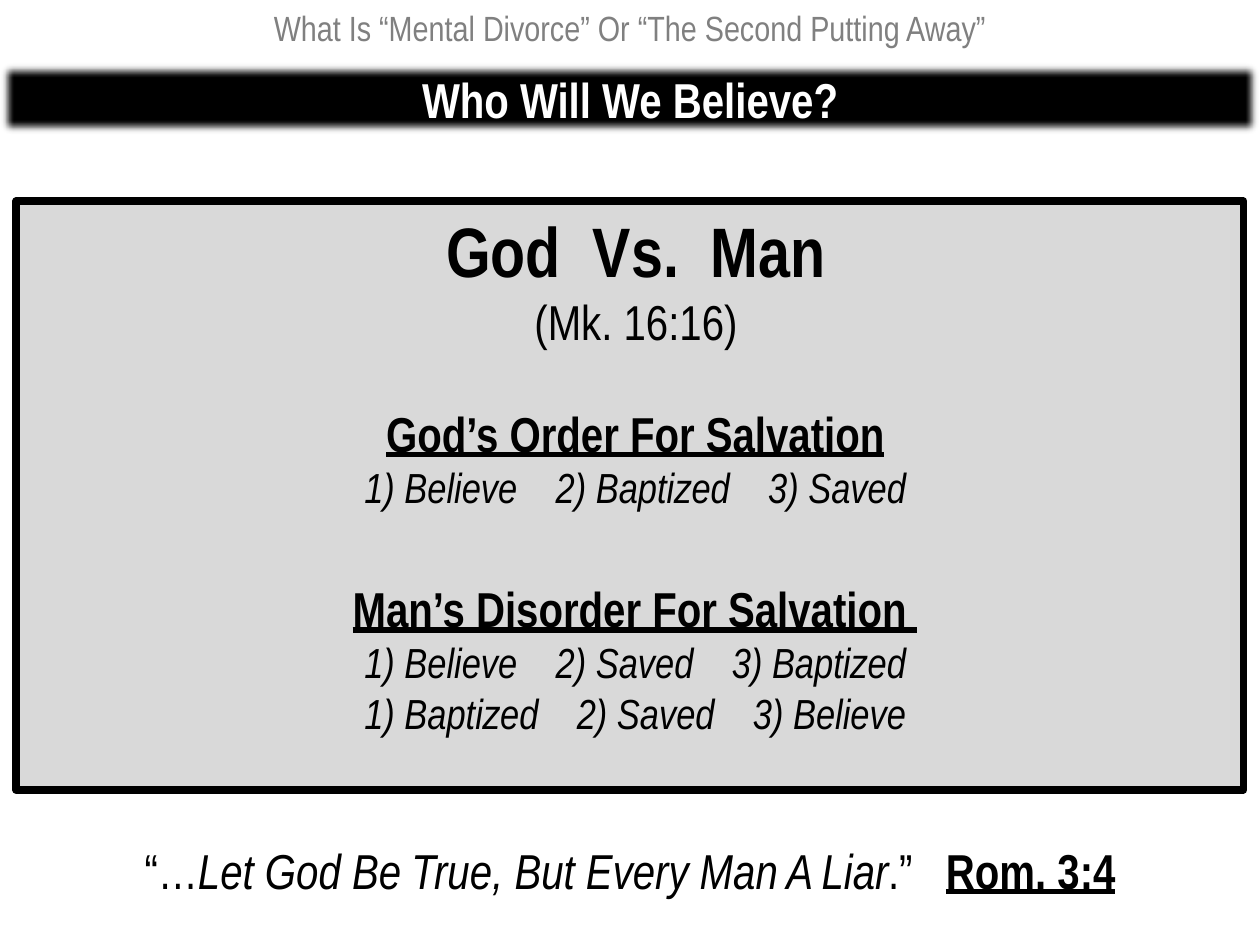
from lxml import etree
from pptx import Presentation
from pptx.dml.color import RGBColor
from pptx.enum.shapes import MSO_SHAPE
from pptx.enum.text import MSO_ANCHOR, PP_ALIGN
from pptx.oxml.ns import qn
from pptx.util import Cm, Pt

RECTANGLE = MSO_SHAPE.RECTANGLE
TOP = MSO_ANCHOR.TOP
CENTER = PP_ALIGN.CENTER

BLACK = RGBColor(0x00, 0x00, 0x00)
WHITE = RGBColor(0xFF, 0xFF, 0xFF)
GRAY = RGBColor(0x80, 0x80, 0x80)
LIGHT_GRAY = RGBColor(0xD9, 0xD9, 0xD9)

FONT = "Arial Narrow"
SPACE_WIDTH = 0.228  # width of a space as a share of the text size
SOFT_EDGE = Pt(5)

TITLE = {"size": Pt(40), "bold": True}
HEADING = {"size": Pt(28), "bold": True, "underline": True}
ORDER = {"size": Pt(24), "italic": True}
PLAIN = {"size": Pt(28)}
QUOTE = {"size": Pt(28), "italic": True}


def add_span(para, text, formats, color, extra_spaces=0):
    """Add a run; extra_spaces widens its letter spacing by that many spaces."""
    span = para.add_run()
    span.text = text
    span.font.name = FONT
    span.font.color.rgb = color
    for name, value in formats.items():
        setattr(span.font, name, value)
    if extra_spaces:
        spacing = extra_spaces * SPACE_WIDTH * formats["size"].pt
        span.font._element.set("spc", str(round(spacing * 100)))


def write_lines(box, lines, color=BLACK):
    """Write centred lines of (text, format, spaces per gap); "|" marks a gap."""
    frame = box.text_frame
    frame.word_wrap = True
    frame.vertical_anchor = TOP
    para = frame.paragraphs[0]
    para.alignment = CENTER
    for number, line in enumerate(lines):
        if number:
            para.add_line_break()
        for text, formats, spaces in line:
            for index, part in enumerate(text.split("|")):
                if index:
                    add_span(para, " ", formats, color, spaces - 1)
                if part:
                    add_span(para, part, formats, color)


deck = Presentation()
deck.slide_width, deck.slide_height = Cm(25.4), Cm(19.05)
page = deck.slides.add_slide(deck.slide_layouts[6])

panel = page.shapes.add_shape(RECTANGLE, Cm(0.33), Cm(4.06), Cm(24.74), Cm(11.86))
panel.shadow.inherit = False
panel.fill.solid()
panel.fill.fore_color.rgb = LIGHT_GRAY
panel.line.color.rgb = BLACK
panel.line.width = Pt(4.5)

topic = page.shapes.add_textbox(0, 0, deck.slide_width, Cm(1.12))
write_lines(topic, [[("What Is “Mental Divorce” Or “The Second Putting Away”",
                      {"size": Pt(20)}, 1)]], GRAY)

banner = page.shapes.add_shape(RECTANGLE, 0, Cm(1.27), deck.slide_width, Cm(1.45))
banner.fill.solid()
banner.fill.fore_color.rgb = BLACK
banner.line.fill.background()
banner.shadow.inherit = False
effects = banner._element.spPr.find(qn("a:effectLst"))
etree.SubElement(effects, qn("a:softEdge")).set("rad", str(int(SOFT_EDGE)))
write_lines(banner, [[("Who Will We Believe?",
                       {"size": Pt(28), "bold": True}, 1)]], WHITE)

text_blocks = [
    ((2.34, 4.06, 20.96, 4.7), [
        [("God|Vs.|Man", TITLE, 2)],
        [("(Mk. 16:16)", PLAIN, 1)],
    ]),
    ((2.11, 8, 21.39, 2.49), [
        [("God’s Order For Salvation", HEADING, 1)],
        [("1) Believe|2) Baptized|3) Saved", ORDER, 4)],
    ]),
    ((2.11, 11.53, 21.39, 3.51), [
        [("Man’s Disorder For Salvation ", HEADING, 1)],
        [("1) Believe|2) Saved|3) Baptized", ORDER, 4)],
        [("1) Baptized|2) Saved|3) Believe", ORDER, 4)],
    ]),
    ((0, 16.81, 25.4, 1.45), [
        [("“…", PLAIN, 1),
         ("Let God Be True, But Every Man A Liar", QUOTE, 1),
         (".”|", PLAIN, 3),
         ("Rom. 3:4", HEADING, 1)],
    ]),
]
for place, lines in text_blocks:
    box = page.shapes.add_textbox(*[Cm(length) for length in place])
    write_lines(box, lines)

deck.save("out.pptx")
